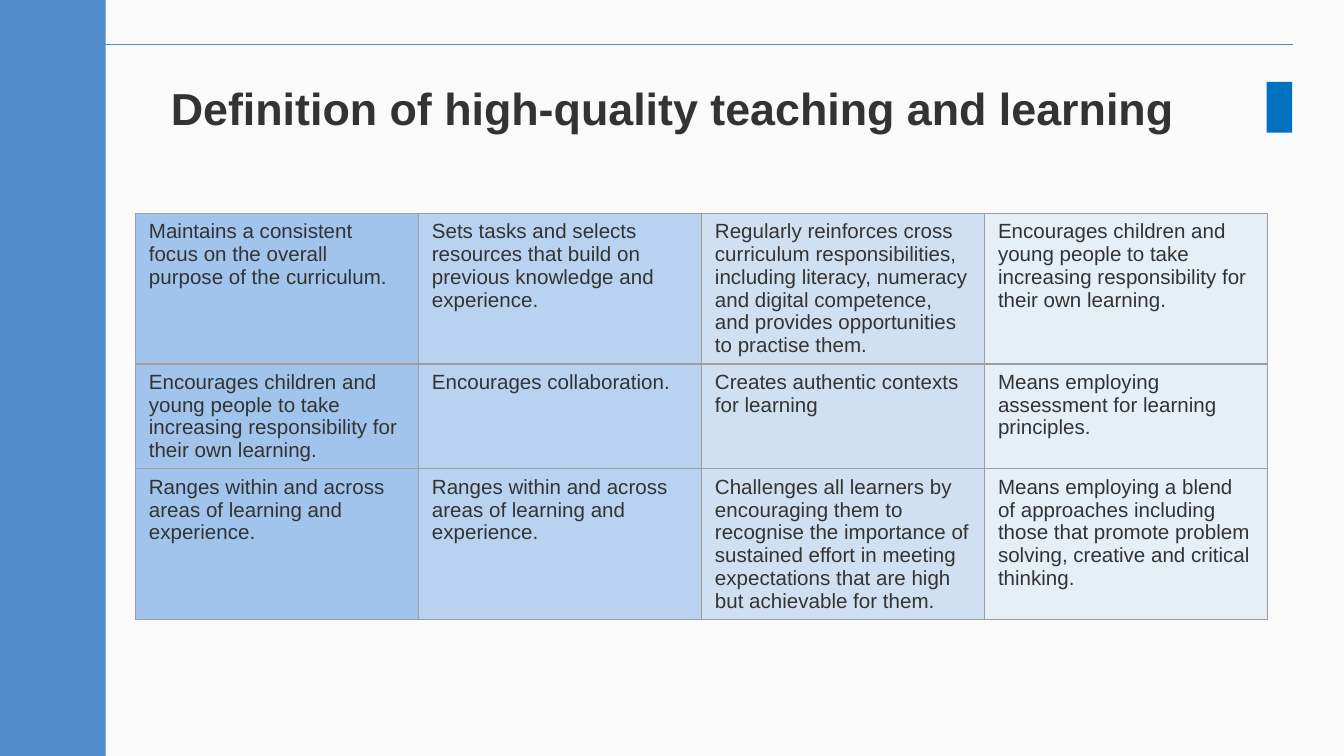
import pptx
import pptx.util
import pptx.dml.color
import pptx.enum.shapes
import pptx.enum.text
import pptx.oxml
import pptx.oxml.ns
from lxml import etree

Cm = pptx.util.Cm
Pt = pptx.util.Pt
RGBColor = pptx.dml.color.RGBColor
qn = pptx.oxml.ns.qn

PAPER = RGBColor(0xFA, 0xFA, 0xFA)
SIDE_BLUE = RGBColor(0x51, 0x8B, 0xCB)
ACCENT_BLUE = RGBColor(0x00, 0x70, 0xC0)
CELL_BLUE = RGBColor(0x86, 0xB5, 0xE7)
GRID_GREY = RGBColor(0x9E, 0x9E, 0x9E)
INK = RGBColor(0x33, 0x33, 0x33)

COLUMN_OPACITY = [77, 57, 37, 17]
ROW_HEIGHTS = [2.85, 1.98, 2.85]
RESPONSIBILITY = ("Encourages children and young people to take increasing "
                  "responsibility for their own learning.")
RANGE = "Ranges within and across areas of learning and experience."
STATEMENTS = [
    ["Maintains a consistent focus on the overall purpose of the curriculum.",
     "Sets tasks and selects resources that build on previous knowledge and experience.",
     "Regularly reinforces cross curriculum responsibilities, including literacy, "
     "numeracy and digital competence, and provides opportunities to practise them.",
     RESPONSIBILITY],
    [RESPONSIBILITY,
     "Encourages collaboration.",
     "Creates authentic contexts for learning",
     "Means employing assessment for learning principles."],
    [RANGE,
     RANGE,
     "Challenges all learners by encouraging them to recognise the importance of "
     "sustained effort in meeting expectations that are high but achievable for them.",
     "Means employing a blend of approaches including those that promote problem "
     "solving, creative and critical thinking."],
]


def style_cell(cell, opacity):
    """Give the cell a translucent blue fill and thin grey borders."""
    cell.fill.solid()
    cell.fill.fore_color.rgb = CELL_BLUE
    properties = cell._tc.get_or_add_tcPr()
    color = properties.find(qn("a:solidFill")).find(qn("a:srgbClr"))
    etree.SubElement(color, qn("a:alpha"), val=str(opacity * 1000))
    for index, side in enumerate(["a:lnL", "a:lnR", "a:lnT", "a:lnB"]):
        border = etree.Element(qn(side), w=str(Pt(0.75)))
        border_fill = etree.SubElement(border, qn("a:solidFill"))
        etree.SubElement(border_fill, qn("a:srgbClr"), val=str(GRID_GREY))
        properties.insert(index, border)


def set_font(paragraph, size, bold):
    paragraph.font.name = "Arial"
    paragraph.font.size = Pt(size)
    paragraph.font.bold = bold
    paragraph.font.color.rgb = INK


deck = pptx.Presentation()
deck.slide_width = Cm(25.4)
deck.slide_height = Cm(14.29)
slide = deck.slides.add_slide(deck.slide_layouts[5])
slide.background.fill.solid()
slide.background.fill.fore_color.rgb = PAPER

# Frame: top rule, side band and accent block
top_rule = slide.shapes.add_connector(
    pptx.enum.shapes.MSO_CONNECTOR.STRAIGHT, Cm(0.13), Cm(0.84), Cm(24.43), Cm(0.84))
top_rule.line.color.rgb = SIDE_BLUE
top_rule.line.width = Pt(0.75)
etree.SubElement(top_rule._element.spPr, qn("a:effectLst"))

for left, top, width, height, color in [
    (0, 0, 2, 14.29, SIDE_BLUE),
    (23.94, 1.55, 0.48, 0.96, ACCENT_BLUE),
]:
    block = slide.shapes.add_shape(
        pptx.enum.shapes.MSO_SHAPE.RECTANGLE, Cm(left), Cm(top), Cm(width), Cm(height))
    block.shadow.inherit = False
    block.fill.solid()
    block.fill.fore_color.rgb = color
    block.line.fill.background()

# Title
title = slide.shapes.title
title.left, title.top, title.width, title.height = Cm(2), Cm(1.24), Cm(21.41), Cm(1.6)
title.text_frame.text = "Definition of high-quality teaching and learning"
title.text_frame.vertical_anchor = pptx.enum.text.MSO_ANCHOR.MIDDLE
title.text_frame.auto_size = pptx.enum.text.MSO_AUTO_SIZE.NONE
heading = title.text_frame.paragraphs[0]
heading.alignment = pptx.enum.text.PP_ALIGN.CENTER
set_font(heading, 24, True)

# Statements, fading from left to right
table = slide.shapes.add_table(
    len(STATEMENTS), len(COLUMN_OPACITY),
    Cm(2.56), Cm(4.03), Cm(21.4), Cm(sum(ROW_HEIGHTS))).table
table.first_row = False
table.horz_banding = False
for row, height, statements in zip(table.rows, ROW_HEIGHTS, STATEMENTS):
    row.height = Cm(height)
    for cell, opacity, statement in zip(row.cells, COLUMN_OPACITY, statements):
        cell.text = statement
        set_font(cell.text_frame.paragraphs[0], 11, False)
        style_cell(cell, opacity)

deck.save("out.pptx")
